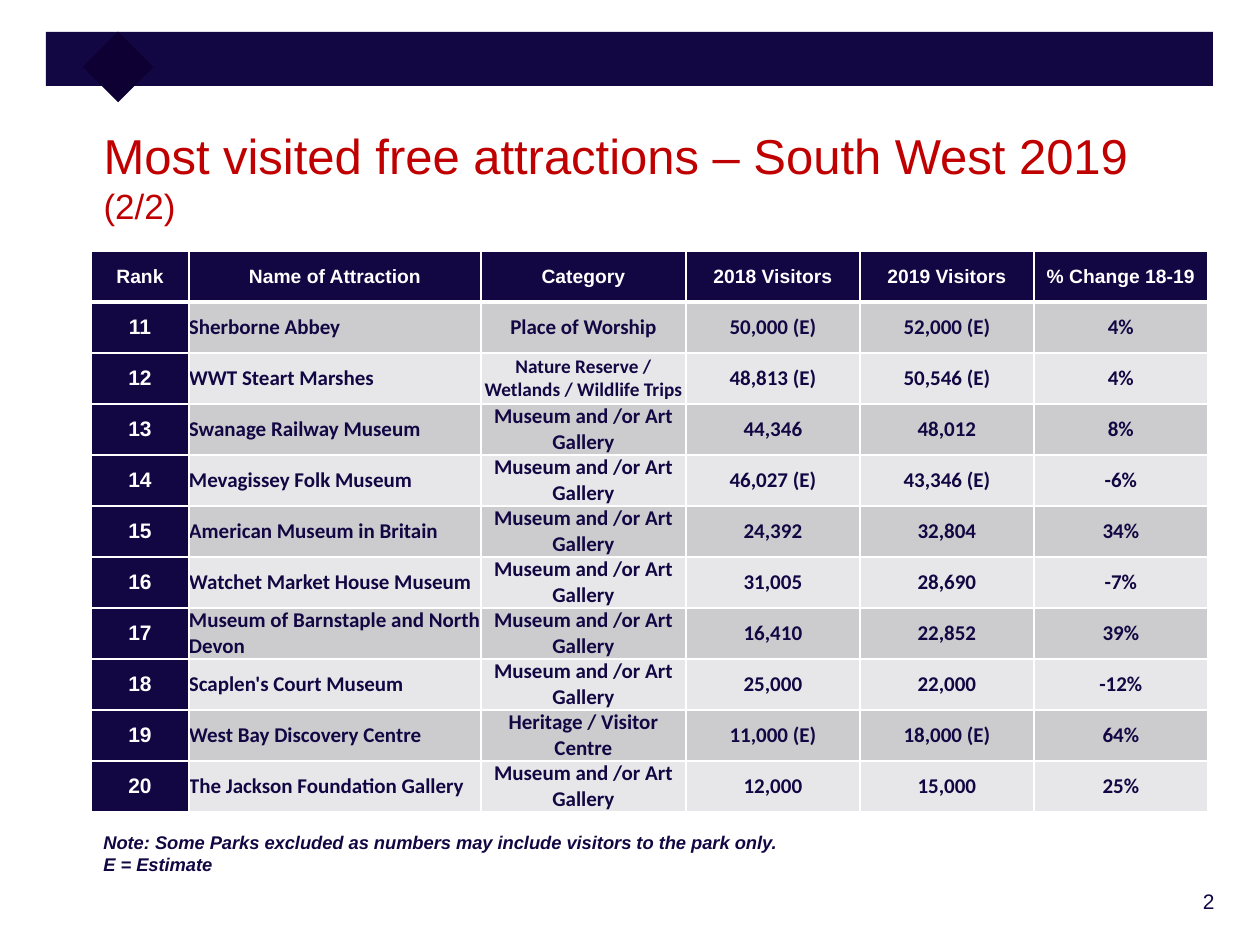
"""Build the slide listing the most visited free attractions in the South West."""
from copy import deepcopy

from lxml import etree
from pptx import Presentation
from pptx import util as u
from pptx.dml.color import RGBColor
from pptx.enum import shapes, text
from pptx.oxml.ns import qn

NAVY = RGBColor(0x12, 0x07, 0x42)
DARK = RGBColor(0x0E, 0x00, 0x33)
RED = RGBColor(0xC0, 0x00, 0x00)
WHITE = RGBColor(0xFF, 0xFF, 0xFF)
GREY = RGBColor(0xCC, 0xCC, 0xCF)
PALE = RGBColor(0xE7, 0xE7, 0xE9)

EMU_PER_PX = 914400 / 126
MUSEUM = "Museum and /or Art Gallery"
NATURE = "Nature Reserve / Wetlands / Wildlife Trips"
COLUMNS = {
    "Rank": 98,
    "Name of Attraction": 292,
    "Category": 205,
    "2018 Visitors": 174,
    "2019 Visitors": 174,
    "% Change 18-19": 174,
}
FIRST_RANK = 11
ATTRACTIONS = [
    ("Sherborne Abbey", "Place of Worship", "50,000 (E)", "52,000 (E)", "4%"),
    ("WWT Steart Marshes", NATURE, "48,813 (E)", "50,546 (E)", "4%"),
    ("Swanage Railway Museum", MUSEUM, "44,346", "48,012", "8%"),
    ("Mevagissey Folk Museum", MUSEUM, "46,027 (E)", "43,346 (E)", "-6%"),
    ("American Museum in Britain", MUSEUM, "24,392", "32,804", "34%"),
    ("Watchet Market House Museum", MUSEUM, "31,005", "28,690", "-7%"),
    ("Museum of Barnstaple and North Devon", MUSEUM, "16,410", "22,852", "39%"),
    ("Scaplen's Court Museum", MUSEUM, "25,000", "22,000", "-12%"),
    ("West Bay Discovery Centre", "Heritage / Visitor Centre", "11,000 (E)", "18,000 (E)", "64%"),
    ("The Jackson Foundation Gallery", MUSEUM, "12,000", "15,000", "25%"),
]


def px(length):
    return u.Emu(round(length * EMU_PER_PX))


class Deck:
    """Hold the style and the current slide."""

    font = "Arial"
    table_font = "Calibri"

    def __init__(self, width, height):
        self.presentation = Presentation()
        self.presentation.slide_width = px(width)
        self.presentation.slide_height = px(height)
        self.slide = self.presentation.slides.add_slide(self.presentation.slide_layouts[5])

    def style(self, run, size, color, bold=False, italic=False, name=None):
        run.font.size = u.Pt(size)
        run.font.name = name or self.font
        run.font.color.rgb = color
        run.font.bold = bold
        run.font.italic = italic

    def block(self, left, top, width, height, color, rotation=0):
        block = self.slide.shapes.add_shape(
            shapes.MSO_SHAPE.RECTANGLE, px(left), px(top), px(width), px(height))
        block.shadow.inherit = False
        block.fill.solid()
        block.fill.fore_color.rgb = color
        block.line.fill.background()
        block.rotation = rotation

    def title(self, lines, sizes, left, top, width, height):
        title = self.slide.shapes.title
        title.left, title.top, title.width, title.height = map(px, (left, top, width, height))
        frame = title.text_frame
        frame.text = "\v".join(lines)
        frame.auto_size = text.MSO_AUTO_SIZE.NONE
        frame.vertical_anchor = text.MSO_ANCHOR.MIDDLE
        heading = frame.paragraphs[0]
        heading.alignment = text.PP_ALIGN.LEFT
        for run, size in zip(heading.runs, sizes):
            self.style(run, size, RED)
        line_break = heading._p.find(qn("a:br"))
        line_break.append(deepcopy(heading.runs[0].font._element))

    def label(self, words, left, top, width, height, size, align=text.PP_ALIGN.LEFT, **emphasis):
        frame = self.slide.shapes.add_textbox(
            px(left), px(top), px(width), px(height)).text_frame
        frame.word_wrap = True
        frame.text = words
        for paragraph in frame.paragraphs:
            paragraph.alignment = align
            for run in paragraph.runs:
                self.style(run, size, NAVY, **emphasis)

    def border(self, cell, side, points):
        line = etree.SubElement(
            cell._tc.get_or_add_tcPr(), qn(f"a:ln{side}"), w=str(u.Pt(points)))
        fill = etree.SubElement(line, qn("a:solidFill"))
        etree.SubElement(fill, qn("a:srgbClr"), val=str(WHITE))

    def cell(self, cell, words, row, column):
        heading = row == 0 or column == 0
        thick = {(0, "B"), (1, "T")}
        for side in "LRTB":
            self.border(cell, side, 3 if (row, side) in thick else 1)
        cell.fill.solid()
        cell.fill.fore_color.rgb = NAVY if heading else (GREY if row % 2 else PALE)
        cell.vertical_anchor = text.MSO_ANCHOR.MIDDLE
        if not heading:
            cell.margin_left = cell.margin_right = cell.margin_top = cell.margin_bottom = 0
        cell.text = words
        paragraph = cell.text_frame.paragraphs[0]
        name_cell = row > 0 and column == 1
        paragraph.alignment = text.PP_ALIGN.LEFT if name_cell else text.PP_ALIGN.CENTER
        self.style(
            paragraph.runs[0],
            11 if row == 0 or words == NATURE else 12,
            WHITE if heading else NAVY,
            bold=True,
            name=self.font if heading else self.table_font,
        )

    def table(self, rows, widths, left, top, row_height):
        table = self.slide.shapes.add_table(
            len(rows), len(widths), px(left), px(top),
            px(sum(widths)), px(row_height * len(rows))).table
        for column, width in zip(table.columns, widths):
            column.width = px(width)
        for r, row in enumerate(rows):
            table.rows[r].height = px(row_height)
            for c, words in enumerate(row):
                self.cell(table.cell(r, c), words, r, c)


def main():
    deck = Deck(1260, 945)
    deck.label("2", 1075, 882, 152, 45, 12, text.PP_ALIGN.RIGHT)
    deck.block(46, 32, 1167, 54, NAVY)
    deck.block(93, 42, 50, 50, DARK, rotation=45)
    deck.title(["Most visited free attractions – South West 2019", "(2/2)"],
               [28, 20], 91, 120, 1122, 112)
    ranked = [(str(rank), *details) for rank, details in enumerate(ATTRACTIONS, FIRST_RANK)]
    deck.table([tuple(COLUMNS), *ranked], list(COLUMNS.values()), 91, 251, 51)
    deck.label("Note: Some Parks excluded as numbers may include visitors to the park only.\n"
               "E = Estimate", 91, 825, 1090, 57, 10.5, bold=True, italic=True)
    deck.presentation.save("out.pptx")


if __name__ == "__main__":
    main()
